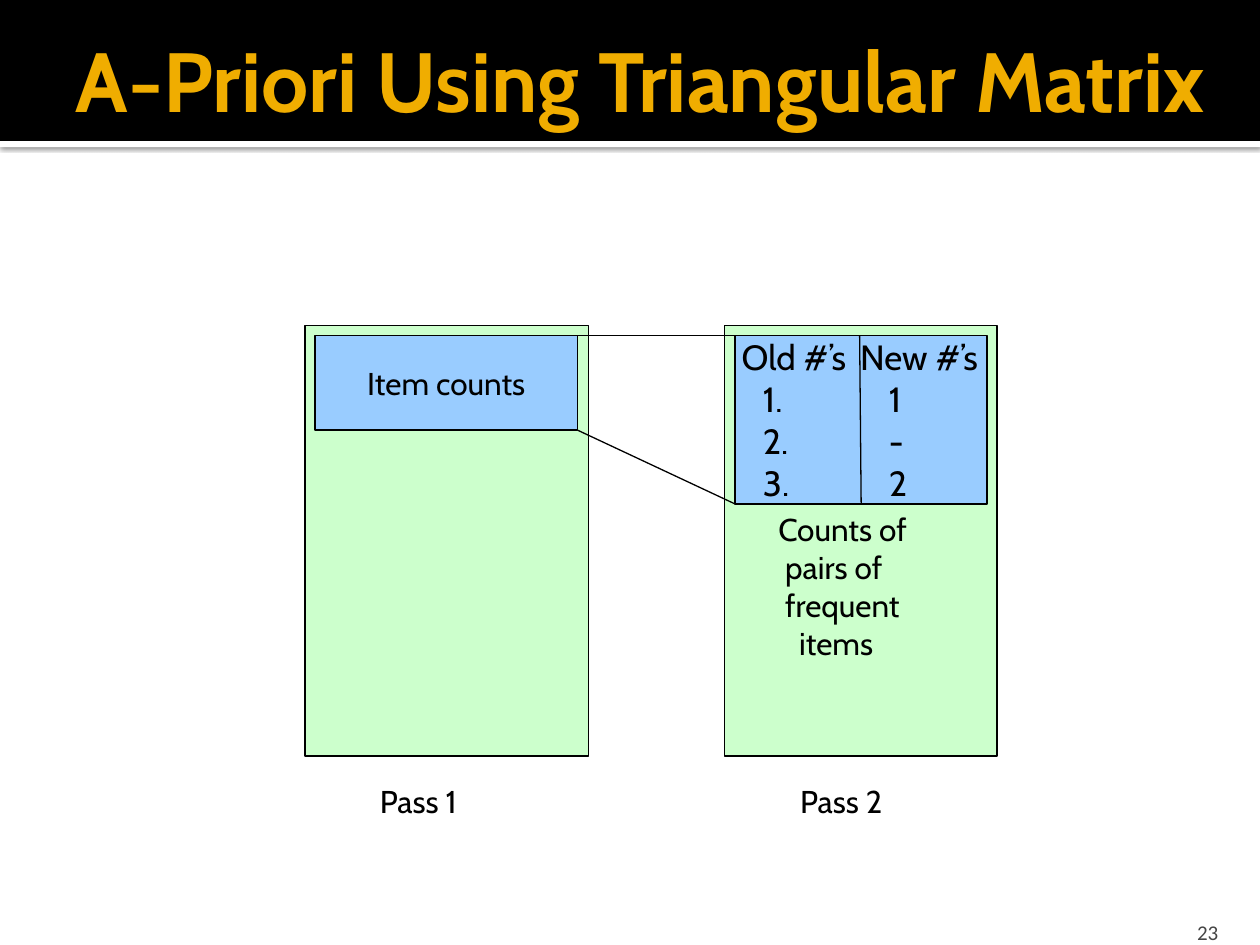
from lxml.etree import SubElement
from pptx import Presentation
from pptx.dml.color import RGBColor
from pptx.enum.shapes import MSO_CONNECTOR, MSO_SHAPE
from pptx.enum.text import MSO_ANCHOR, PP_ALIGN
from pptx.oxml import parse_xml
from pptx.oxml.ns import nsdecls, qn
from pptx.util import Cm, Pt

hue = RGBColor.from_string
BLACK, GREEN, BLUE = "000000", "CCFFCC", "99CCFF"


def write(shape, lines, frame={}, font={}, align=PP_ALIGN.LEFT):
    """Put one paragraph per line; return the paragraphs."""
    text = shape.text_frame
    text.text = "\n".join(lines)
    for key, val in {"word_wrap": True, **frame}.items():
        setattr(text, key, val)
    look = {"name": "Cabin", "size": Pt(18), "color": BLACK, **font}
    color = look.pop("color")
    for par in text.paragraphs:
        par.alignment = align
        for run in par.runs:
            run.font.color.rgb = hue(color)
            for key, val in look.items():
                setattr(run.font, key, val)
    return text.paragraphs


def block(place, fill, edge=BLACK):
    shape = shapes.add_shape(MSO_SHAPE.RECTANGLE, *map(Cm, place))
    shape.shadow.inherit = False
    shape.fill.solid()
    shape.fill.fore_color.rgb = hue(fill)
    if edge:
        shape.line.color.rgb = hue(edge)
        shape.line.width = Pt(0.75)
    else:
        shape.line.fill.background()
    return shape


deck = Presentation()
deck.slide_width, deck.slide_height = Cm(25.4), Cm(19.05)
slide = deck.slides.add_slide(deck.slide_layouts[5])
shapes = slide.shapes

# Header band, with a shaded strip below it
strip = block((0, 2.84, 25.4, 0.13), "FFFFFF", None)
glow = strip._element.spPr.find(qn("a:effectLst"))
glow.append(parse_xml(
    f'<a:outerShdw {nsdecls("a")} blurRad="{Pt(2.5)}" dist="{Pt(0.8)}" '
    'dir="5400000" algn="t" rotWithShape="0"><a:srgbClr val="000000">'
    '<a:alpha val="60000"/></a:srgbClr></a:outerShdw>'))
block((0, 0, 25.4, 2.84), BLACK, None)

title = shapes.title
shapes._spTree.append(title._element)
spot = {"left": 1.27, "top": 0.43, "width": 24.13, "height": 2.34}
for key, val in spot.items():
    setattr(title, key, Cm(val))
write(title, ["A-Priori Using Triangular Matrix"],
      {"vertical_anchor": MSO_ANCHOR.MIDDLE, "margin_right": Cm(0.13)},
      {"size": Pt(48), "bold": True, "color": "F0AD00"})

page = shapes.add_textbox(Cm(22.78), Cm(18.29), Cm(2.03), Cm(0.76))
write(page, ["23"],
      {"vertical_anchor": MSO_ANCHOR.BOTTOM, "margin_bottom": 0},
      {"name": "Calibri", "size": Pt(12), "color": "454545"}, PP_ALIGN.RIGHT)

# Memory of the two passes
top, base, edge = 6.77, 10.16, 14.82
for label, left, width, mark in (("Pass 1", 6.15, 5.71, 7.41),
                                 ("Pass 2", 14.6, 5.5, 15.88)):
    block((left, 6.56, width, 8.68), GREEN)
    note = shapes.add_textbox(Cm(mark), Cm(15.65), Cm(2.92), Cm(1.27))
    write(note, [label])

items = block((6.35, top, 5.29, 1.9), BLUE)
write(items, ["Item counts"], {"vertical_anchor": MSO_ANCHOR.MIDDLE},
      align=PP_ALIGN.CENTER)

# Old numbers are list numbers, new numbers are the list text
table = block((edge, top, 5.08, base - top), BLUE)
head, *rows = write(
    table, ["Old #’s\tNew #’s", "1", "-", "2"],
    {"vertical_anchor": MSO_ANCHOR.MIDDLE, "margin_left": Cm(0.13),
     "margin_right": 0, "margin_top": 0, "margin_bottom": 0},
    {"size": Pt(20)})
tabs = SubElement(head._p.get_or_add_pPr(), qn("a:tabLst"))
SubElement(tabs, qn("a:tab"), pos=str(Cm(2.39)), algn="l")
for row in rows:
    prop = row._p.get_or_add_pPr()
    prop.set("marL", str(Cm(2.97)))
    prop.set("indent", str(Cm(-2.54)))
    SubElement(prop, qn("a:buAutoNum"), type="arabicPeriod")

pairs = shapes.add_textbox(Cm(15.44), Cm(base), Cm(4.06), Cm(4.32))
words = ["Counts of", "pairs of", "frequent", "items"]
for par, inset in zip(write(pairs, words), (0, 0.14, 0.14, 0.42)):
    par._p.get_or_add_pPr().set("marL", str(Cm(inset)))

for ends in ((11.64, 8.67, edge, base), (11.64, top, edge, top),
             (17.33, top, 17.36, base)):
    line = shapes.add_connector(MSO_CONNECTOR.STRAIGHT, *map(Cm, ends))
    line.line.color.rgb = hue(BLACK)
    line.line.width = Pt(0.75)
    SubElement(line._element.spPr, qn("a:effectLst"))

deck.save("out.pptx")
